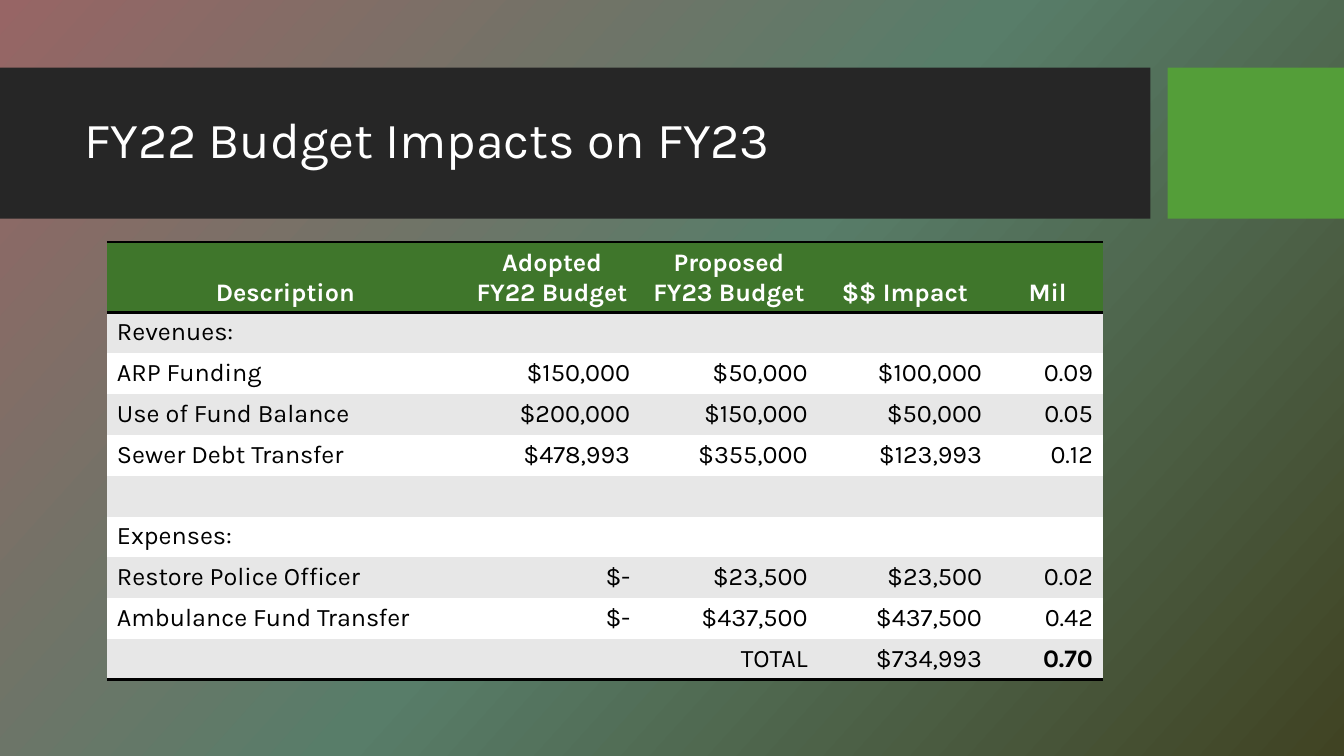
"""Build the slide on FY22 budget impacts on FY23."""
from copy import deepcopy

from lxml import etree
from pptx import Presentation
from pptx.dml.color import RGBColor
from pptx.enum.shapes import MSO_SHAPE
from pptx.enum.text import MSO_ANCHOR, PP_ALIGN
from pptx.oxml.ns import qn
from pptx.util import Inches, Pt

RECT = MSO_SHAPE.RECTANGLE
LEFT, MID, RIGHT = PP_ALIGN.LEFT, PP_ALIGN.CENTER, PP_ALIGN.RIGHT
TOP, CENTRE, BASE = MSO_ANCHOR.TOP, MSO_ANCHOR.MIDDLE, MSO_ANCHOR.BOTTOM
FONT = "Karla"
BLACK, WHITE, GREY = "000000", "FFFFFF", "E7E7E7"
DARK, GREEN, LEAF = "262626", "549E39", "3F762B"
PLAIN = "{2D5ABB26-0587-4C30-8999-92F81FD0307C}"
COLS = [3.54, 1.75, 1.76, 1.73, 1.1]
HEAD, BODY = 0.69, 0.405
ROWS = [
    ["Description", "Adopted FY22 Budget", "Proposed FY23 Budget",
     "$$ Impact", "Mil"],
    ["Revenues:", "", "", "", ""],
    ["ARP Funding", "$150,000", "$50,000", "$100,000", "0.09"],
    ["Use of Fund Balance", "$200,000", "$150,000", "$50,000", "0.05"],
    ["Sewer Debt Transfer", "$478,993", "$355,000", "$123,993", "0.12"],
    ["", "", "", "", ""],
    ["Expenses:", "", "", "", ""],
    ["Restore Police Officer", "$-", "$23,500", "$23,500", "0.02"],
    ["Ambulance Fund Transfer", "$-", "$437,500", "$437,500", "0.42"],
    ["", "", "TOTAL", "$734,993", "0.70"],
]


def paint(color, code):
    """Set a colour from a hex string."""
    color.rgb = RGBColor.from_string(code)


def write(frame, words, size=18, code=BLACK, bold=False, align=LEFT, space=1):
    """Put formatted text in a text frame."""
    para = frame.paragraphs[0]
    para.text = words
    para.alignment = align
    para.line_spacing = space
    para.font.name = FONT
    para.font.size = Pt(size)
    para.font.bold = bold
    paint(para.font.color, code)


def shade(slide, codes, angle):
    """Fill the background with an even gradient."""
    fill = slide.background.fill
    fill.gradient()
    fill.gradient_angle = 360 - angle
    stops = slide.element.xpath(".//a:gsLst")[0]
    stops.append(deepcopy(stops[-1]))
    for i, (stop, code) in enumerate(zip(fill.gradient_stops, codes)):
        stop.position = i / (len(codes) - 1)
        paint(stop.color, code)


def block(slide, left, width, code):
    """Draw one plain block of the title band."""
    shape = slide.shapes.add_shape(
        RECT, Inches(left), Inches(0.67), Inches(width), Inches(1.5))
    shape.shadow.inherit = False
    shape.fill.solid()
    paint(shape.fill.fore_color, code)
    shape.line.fill.background()


def title(slide, words):
    """Add the slide title."""
    box = slide.shapes.add_textbox(
        Inches(0.74), Inches(0.82), Inches(10.51), Inches(1.18))
    box.text_frame.word_wrap = True
    box.text_frame.vertical_anchor = CENTRE
    write(box.text_frame, words, size=36, code=WHITE, space=0.9)


def rule(cell, sides):
    """Draw black borders on the sides of a cell, given in schema order."""
    props = cell._tc.get_or_add_tcPr()
    for i, side in enumerate(sides):
        line = etree.Element(qn(f"a:ln{side}"), w=str(Pt(2)))
        fill = etree.SubElement(line, qn("a:solidFill"))
        etree.SubElement(fill, qn("a:srgbClr"), val=BLACK)
        props.insert(i, line)


def grid(slide, rows):
    """Add the budget table."""
    frame = slide.shapes.add_table(
        len(rows), len(COLS), Inches(1.06), Inches(2.4),
        Inches(sum(COLS)), Inches(HEAD + BODY * (len(rows) - 1)))
    frame.element.xpath(".//a:tableStyleId")[0].text = PLAIN
    table = frame.table
    for col, width in zip(table.columns, COLS):
        col.width = Inches(width)
    last = len(rows) - 1
    for r, row in enumerate(rows):
        head = r == 0
        table.rows[r].height = Inches(HEAD if head else BODY)
        back = LEAF if head else GREY if r % 2 else WHITE
        for c, words in enumerate(row):
            cell = table.cell(r, c)
            cell.vertical_anchor = BASE if head else TOP
            cell.fill.solid()
            paint(cell.fill.fore_color, back)
            total = r == last and c == len(row) - 1
            write(cell.text_frame, words, code=WHITE if head else BLACK,
                  bold=head or total,
                  align=MID if head else RIGHT if c else LEFT)
            if head or r == last:
                rule(cell, "TB" if head else "B")


def main():
    """Build and save the slide."""
    deck = Presentation()
    deck.slide_width, deck.slide_height = Inches(13.33), Inches(7.5)
    slide = deck.slides.add_slide(deck.slide_layouts[6])
    shade(slide, ["976565", "587D69", "404323"], 42)
    block(slide, 0, 11.41, DARK)
    block(slide, 11.58, 1.75, GREEN)
    title(slide, "FY22 Budget Impacts on FY23")
    grid(slide, ROWS)
    deck.save("out.pptx")


if __name__ == "__main__":
    main()
